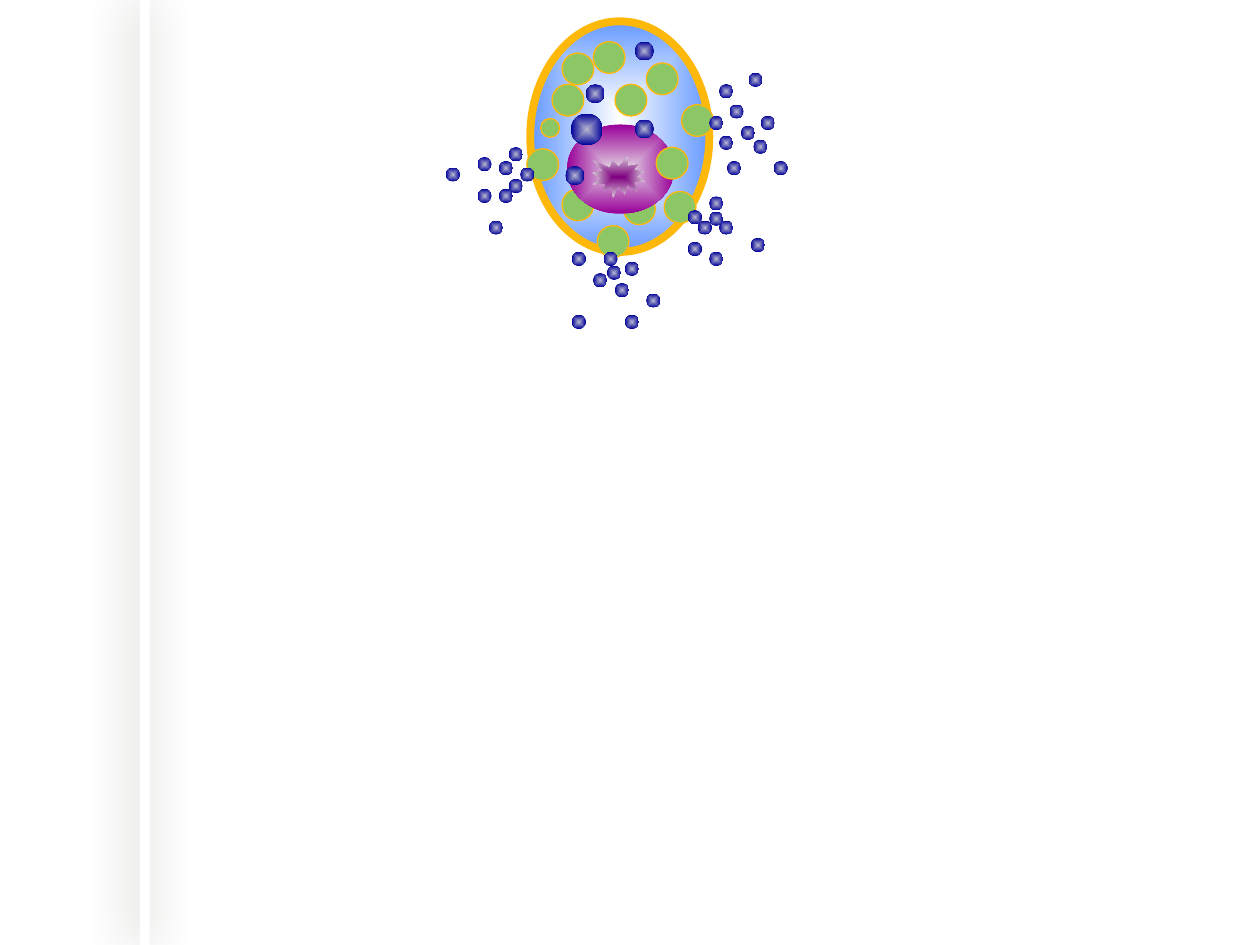
import pptx
import pptx.dml.color
import pptx.enum.shapes
import pptx.oxml
import pptx.oxml.ns
import pptx.util
from lxml import etree

RGBColor = pptx.dml.color.RGBColor
MSO_SHAPE = pptx.enum.shapes.MSO_SHAPE
Cm = pptx.util.Cm
qn = pptx.oxml.ns.qn

WHITE = RGBColor(0xFF, 0xFF, 0xFF)
SKY = RGBColor(0x66, 0x99, 0xFF)
AMBER = RGBColor(0xFE, 0xB8, 0x0A)
GREEN = RGBColor(0x8D, 0xC7, 0x65)
LILAC = RGBColor(0xE1, 0xD2, 0xE1)
MAGENTA = RGBColor(0x99, 0x00, 0x99)
PURPLE = RGBColor(0x80, 0x00, 0x80)
MAUVE = RGBColor(0xD5, 0xC9, 0xD5)
PALE_BLUE = RGBColor(0xB6, 0xB6, 0xD0)
NAVY = RGBColor(0x00, 0x00, 0x99)
SHADOW = RGBColor(0x73, 0x6F, 0x63)

CM_PER_INCH = 2.54
VESICLE, GRANULE, MEDIATOR = 0.25, 0.15, 0.11

CELL = (4.21, 0.17, 1.42, 1.83)
NUCLEUS = (4.5, 0.99, 0.85, 0.71)
NUCLEOLUS = (4.7, 1.24, 0.42, 0.33)
SIDE_BAND = (1.11, 0, 0.08, 7.5)

VESICLES_BEHIND = [
    (4.38, 0.67), (4.74, 1.79), (4.18, 1.18), (4.46, 1.5), (5.27, 1.52), (5.41, 0.83),
    (4.71, 0.33), (5.13, 0.5), (4.88, 0.67), (4.95, 1.53), (4.46, 0.42),
]
LARGE_GRANULES = [(4.53, 0.9)]
VESICLES_IN_FRONT = [(5.21, 1.17)]
GRANULES = [(4.49, 1.32), (5.04, 0.33), (4.65, 0.67), (5.04, 0.95)]
SMALL_VESICLES = [(4.29, 0.94)]
RELEASED_MEDIATORS = {
    "upper right": [
        (5.63, 0.92), (5.79, 0.83), (5.71, 1.08), (5.88, 1), (5.77, 1.28), (6.04, 0.92),
        (5.71, 0.67), (5.98, 1.11), (6.14, 1.28), (5.94, 0.58),
    ],
    "lower right": [
        (5.46, 1.67), (5.63, 2), (5.63, 1.56), (5.54, 1.75), (5.96, 1.89), (5.71, 1.75),
        (5.46, 1.92), (5.63, 1.68),
    ],
    "left": [
        (3.54, 1.33), (4.13, 1.33), (4.04, 1.17), (4.04, 1.42), (3.88, 1.75), (3.79, 1.25),
        (3.96, 1.28), (3.79, 1.5), (3.96, 1.5),
    ],
    "bottom": [
        (4.54, 2.5), (5.13, 2.33), (4.54, 2), (4.96, 2.5), (4.88, 2.25), (4.71, 2.17),
        (4.79, 2), (4.96, 2.08), (4.82, 2.11),
    ],
}


def length(inches):
    return Cm(round(inches * CM_PER_INCH, 2))


def add_part(shapes, box, colors, line_width=None, preset=MSO_SHAPE.OVAL):
    part = shapes.add_shape(preset, *map(length, box))
    part.shadow.inherit = False
    if len(colors) == 1:
        part.fill.solid()
        part.fill.fore_color.rgb = colors[0]
    else:
        part.fill.gradient()
        for stop, color in zip(part.fill.gradient_stops, colors):
            stop.color.rgb = color
        gradient = part._element.spPr.find(qn("a:gradFill"))
        gradient.remove(gradient.find(qn("a:lin")))
        radial = etree.SubElement(gradient, qn("a:path"), path="shape")
        etree.SubElement(radial, qn("a:fillToRect"), l="50000", t="50000", r="50000", b="50000")
    if line_width:
        part.line.color.rgb = AMBER
        part.line.width = pptx.util.Pt(line_width)
    else:
        part.line.fill.background()
    return part


def add_dots(shapes, places, size, colors, line_width=None):
    for left, top in places:
        add_part(shapes, (left, top, size, size), colors, line_width)


def add_side_band(shapes):
    band = add_part(shapes, SIDE_BAND, (WHITE,), preset=MSO_SHAPE.RECTANGLE)
    effects = band._element.spPr.find(qn("a:effectLst"))
    shadow = etree.SubElement(
        effects, qn("a:outerShdw"), blurRad=str(pptx.util.Pt(25)), dist=str(pptx.util.Pt(3)),
        dir="10800000", algn="tl", rotWithShape="0",
    )
    color = etree.SubElement(shadow, qn("a:srgbClr"), val=str(SHADOW))
    etree.SubElement(color, qn("a:alpha"), val="50000")


def add_cell(shapes):
    blue = (PALE_BLUE, NAVY)
    add_part(shapes, CELL, (WHITE, SKY), 4.5)
    add_dots(shapes, VESICLES_BEHIND, VESICLE, (GREEN,), 0.75)
    add_part(shapes, NUCLEUS, (LILAC, MAGENTA))
    add_part(shapes, NUCLEOLUS, (PURPLE, MAUVE), preset=MSO_SHAPE.EXPLOSION1)
    add_dots(shapes, LARGE_GRANULES, VESICLE, blue)
    add_dots(shapes, VESICLES_IN_FRONT, VESICLE, (GREEN,), 0.75)
    add_dots(shapes, GRANULES, GRANULE, blue)
    add_dots(shapes, SMALL_VESICLES, GRANULE, (GREEN,), 0.75)
    for places in RELEASED_MEDIATORS.values():
        add_dots(shapes, places, MEDIATOR, blue)


def main():
    deck = pptx.Presentation()
    deck.slide_width, deck.slide_height = Cm(25.4), Cm(19.05)
    slide = deck.slides.add_slide(deck.slide_layouts[6])
    slide.background.fill.solid()
    slide.background.fill.fore_color.rgb = WHITE
    add_side_band(slide.shapes)
    add_cell(slide.shapes.add_group_shape().shapes)
    deck.save("out.pptx")


if __name__ == "__main__":
    main()
